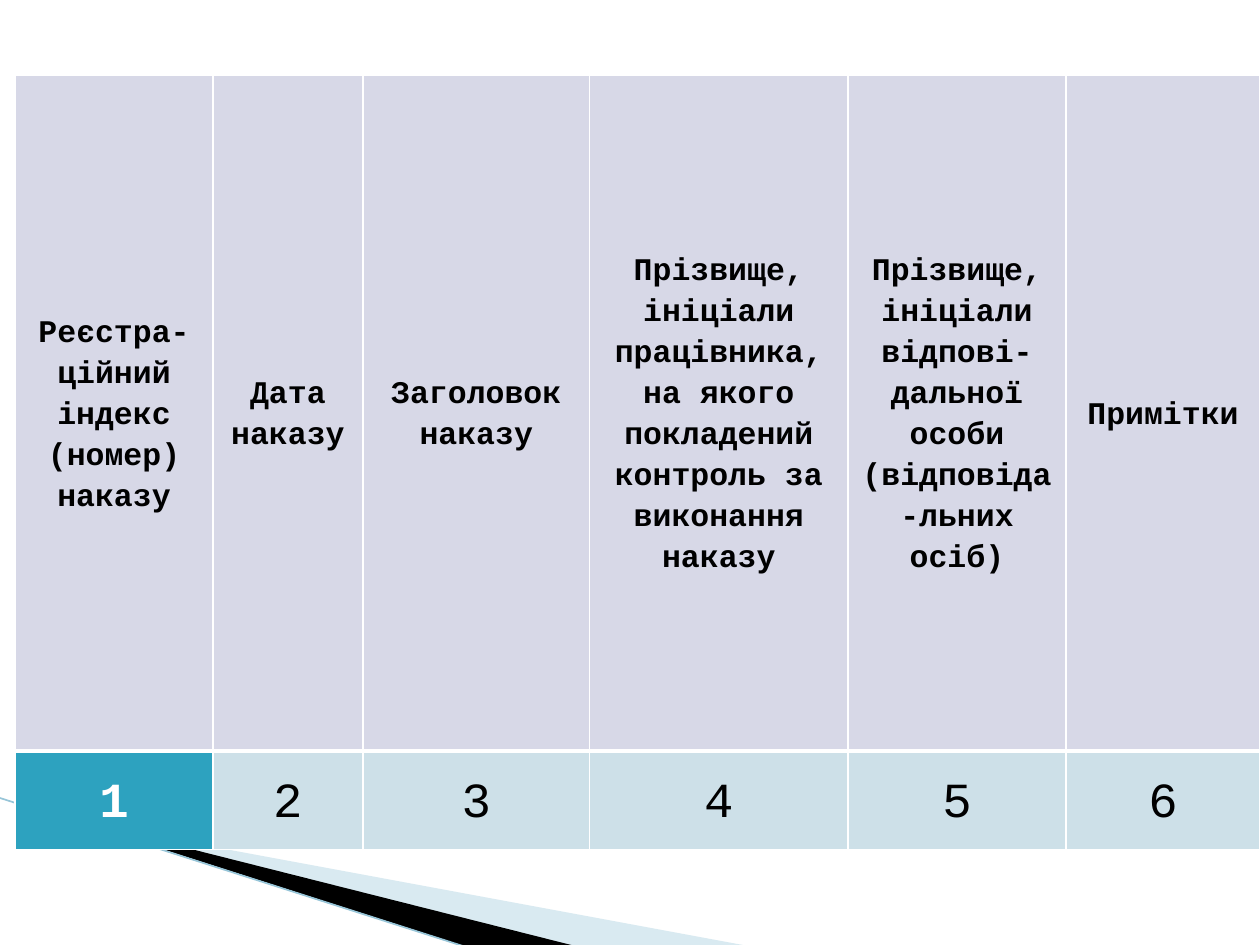
"""Build the order register slide: a six-column table over corner wedges."""
from lxml.etree import SubElement
from pptx import Presentation
from pptx.dml.color import RGBColor
from pptx.enum.shapes import MSO_CONNECTOR
from pptx.enum.text import MSO_ANCHOR, PP_ALIGN
from pptx.oxml.ns import qn
from pptx.util import Pt

HEADS = [
    ("Реєстра-ційний індекс (номер) наказу", 113),
    ("Дата наказу", 85.7),
    ("Заголовок наказу", 129.6),
    ("Прізвище, ініціали працівника, на якого покладений контроль "
     "за виконання наказу", 147.6),
    ("Прізвище, ініціали відпові-дальної особи (відповіда-льних осіб)", 124.6),
    ("Примітки", 110.9),
]
ROWS = [386, 56.2]
LEFT, TOP = 8.64, 43.2
FONT = "Courier New"
COLORS = {"head": "D7D8E7", "first": "2DA2BF", "body": "CDE0E8",
          "black": "000000", "white": "FFFFFF", "pale": "A0CBDC",
          "edge": "97C5D8"}
WEDGES = [
    ("pale", 40, [(39.6, 468.7), (428.4, 540.7), (328.3, 540.7), (39.6, 468)]),
    ("black", 100, [(38.2, 467.3), (329, 540.7), (267.8, 541.4), (38.9, 468)]),
]
EDGE = [(-0.7, 455.8), (267.1, 541.4)]


def rgb(name):
    return RGBColor.from_string(COLORS[name])


def add_wedge(shapes, color, alpha, points):
    spots = [(Pt(x), Pt(y)) for x, y in points]
    pen = shapes.build_freeform(*spots[0])
    pen.add_line_segments(spots[1:], close=True)
    wedge = pen.convert_to_shape()
    wedge.shadow.inherit = False
    wedge.fill.solid()
    wedge.fill.fore_color.rgb = rgb(color)
    wedge.line.fill.background()
    if alpha < 100:
        tint = next(wedge.element.spPr.iter(qn("a:srgbClr")))
        SubElement(tint, qn("a:alpha"), val=str(alpha * 1000))


def add_edge(shapes):
    ends = [Pt(v) for spot in EDGE for v in spot]
    edge = shapes.add_connector(MSO_CONNECTOR.STRAIGHT, *ends)
    edge.line.color.rgb = rgb("edge")
    edge.line.width = Pt(0.95)
    SubElement(edge.element.spPr, qn("a:effectLst"))


def set_cell(cell, text, size, bold, ink, fill, widths):
    props = cell._tc.get_or_add_tcPr()
    for side, width in widths.items():
        line = SubElement(props, qn(f"a:ln{side}"), w=str(Pt(width)))
        SubElement(SubElement(line, qn("a:solidFill")), qn("a:srgbClr"),
                   val=COLORS["white"])
    cell.fill.solid()
    cell.fill.fore_color.rgb = rgb(fill)
    cell.vertical_anchor = MSO_ANCHOR.MIDDLE
    cell.margin_left = cell.margin_right = Pt(7.2)
    cell.margin_top = cell.margin_bottom = Pt(1.44)
    para = cell.text_frame.paragraphs[0]
    para.alignment = PP_ALIGN.CENTER
    para.line_spacing = 1.15
    run = para.add_run()
    run.text = text
    run.font.name = FONT
    run.font.size = Pt(size)
    run.font.bold = bold
    run.font.color.rgb = rgb(ink)


def add_grid(shapes):
    wide = sum(width for _, width in HEADS)
    frame = shapes.add_table(len(ROWS), len(HEADS), Pt(LEFT), Pt(TOP),
                             Pt(wide), Pt(sum(ROWS)))
    grid = frame.table
    for row, height in zip(grid.rows, ROWS):
        row.height = Pt(height)
    for col, (head, width) in enumerate(HEADS):
        grid.columns[col].width = Pt(width)
        first = col == 0
        set_cell(grid.cell(0, col), head, 18, True, "black", "head",
                 {"L": 1, "R": 1, "T": 1, "B": 3})
        set_cell(grid.cell(1, col), str(col + 1), 28, first,
                 "white" if first else "black", "first" if first else "body",
                 {"L": 1, "R": 1, "T": 3, "B": 1})


def main():
    deck = Presentation()
    deck.slide_width, deck.slide_height = Pt(720), Pt(540)
    shapes = deck.slides.add_slide(deck.slide_layouts[6]).shapes
    for wedge in WEDGES:
        add_wedge(shapes, *wedge)
    add_edge(shapes)
    add_grid(shapes)
    deck.save("out.pptx")


if __name__ == "__main__":
    main()
